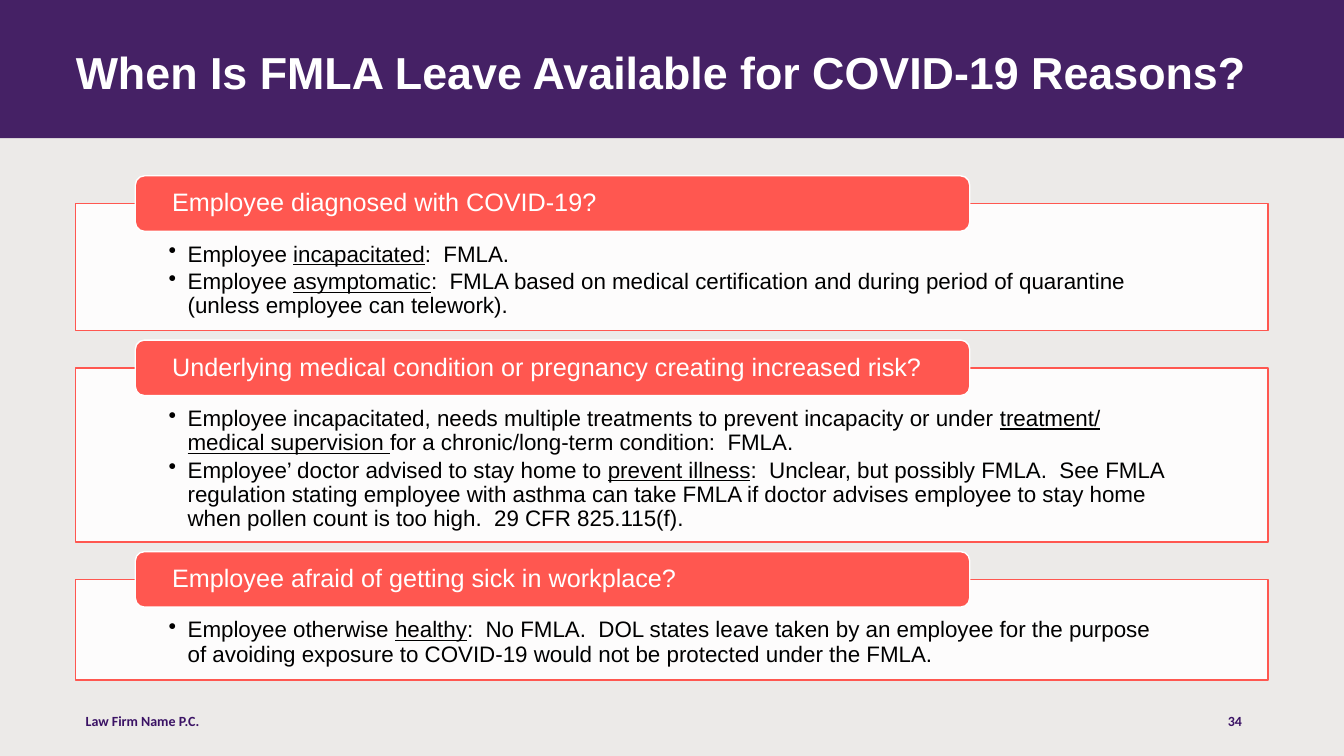
from dataclasses import dataclass

import lxml.etree
import pptx
import pptx.dml.color
import pptx.enum.shapes
import pptx.enum.text
import pptx.oxml.ns
import pptx.util

Cm = pptx.util.Cm
Pt = pptx.util.Pt
Kind = pptx.enum.shapes.MSO_SHAPE
Align = pptx.enum.text.PP_ALIGN
Anchor = pptx.enum.text.MSO_ANCHOR
qn = pptx.oxml.ns.qn


@dataclass(frozen=True)
class Theme:
    purple: str = "3B1365"
    coral: str = "FF5750"
    taupe: str = "82766A"
    white: str = "FFFFFF"
    black: str = "000000"
    font: str = "Arial"
    small: str = "Calibri"
    title: int = 32
    head: int = 18
    body: int = 16
    foot: int = 10


THEME = Theme()
WIDE, HIGH = 33.87, 19.05
LEFT, SPAN = 1.91, 30.05
GAP = 0.94
CARDS = [
    (3.2, "Employee diagnosed with COVID-19?", [
        "Employee _incapacitated_:  FMLA.",
        "Employee _asymptomatic_:  FMLA based on medical certification and "
        "during period of quarantine (unless employee can telework).",
    ]),
    (4.39, "Underlying medical condition or pregnancy creating increased risk?", [
        "Employee incapacitated, needs multiple treatments to prevent incapacity "
        "or under _treatment/ medical supervision _for a chronic/long-term "
        "condition:  FMLA.",
        "Employee’ doctor advised to stay home to _prevent illness_:  Unclear, "
        "but possibly FMLA.  See FMLA regulation stating employee with asthma "
        "can take FMLA if doctor advises employee to stay home when pollen "
        "count is too high.  29 CFR 825.115(f).",
    ]),
    (2.54, "Employee afraid of getting sick in workplace?", [
        "Employee otherwise _healthy_:  No FMLA.  DOL states leave taken by an "
        "employee for the purpose of avoiding exposure to COVID-19 would not be "
        "protected under the FMLA.",
    ]),
]


def tint(code):
    return pptx.dml.color.RGBColor.from_string(code)


def bullet(para):
    props = para._p.get_or_add_pPr()
    props.set("marL", str(Cm(0.48)))
    props.set("indent", str(-Cm(0.48)))
    lxml.etree.SubElement(props, qn("a:buChar")).set("char", "•")


def write(text, *, shape, size, color, font=THEME.font, bold=False,
          align=Align.LEFT, anchor=Anchor.TOP, inset=(0, 0, 0, 0),
          line=0.9, after=0, dots=False):
    frame = shape.text_frame
    frame.word_wrap = True
    frame.vertical_anchor = anchor
    (frame.margin_left, frame.margin_top,
     frame.margin_right, frame.margin_bottom) = map(Cm, inset)
    for num, row in enumerate(text.split("\n")):
        para = frame.add_paragraph() if num else frame.paragraphs[0]
        para.alignment = align
        para.line_spacing = line
        para.space_after = Pt(after)
        if dots:
            bullet(para)
        for part, words in enumerate(row.split("_")):
            run = para.add_run()
            run.text = words
            run.font.name = font
            run.font.size = Pt(size)
            run.font.bold = bold
            run.font.underline = part % 2 == 1
            run.font.color.rgb = tint(color)


def block(slide, kind, area, fill, line=None, alpha=None):
    shape = slide.shapes.add_shape(kind, *map(Cm, area))
    shape.shadow.inherit = False
    shape.fill.solid()
    shape.fill.fore_color.rgb = tint(fill)
    if alpha:
        color = shape.fill._xPr.find(qn("a:solidFill"))[0]
        lxml.etree.SubElement(color, qn("a:alpha")).set("val", str(alpha * 1000))
    if line:
        shape.line.color.rgb = tint(line)
        shape.line.width = Pt(1)
    else:
        shape.line.fill.background()
    return shape


def label(slide, text, area, **form):
    write(text, shape=slide.shapes.add_textbox(*map(Cm, area)), **form)


def card(slide, top, high, head, rows):
    panel = block(slide, Kind.RECTANGLE, (LEFT, top, SPAN, high),
                  THEME.white, line=THEME.coral, alpha=90)
    write("\n".join(rows), shape=panel, size=THEME.body, color=THEME.black,
          inset=(2.34, 0.99, 2.34, 0.3), after=2.5, dots=True)
    tab = block(slide, Kind.ROUNDED_RECTANGLE, (3.41, top - 0.7, 21.03, 1.4),
                THEME.coral, line=THEME.white)
    write(head, shape=tab, size=THEME.head, color=THEME.white,
          anchor=Anchor.MIDDLE, inset=(0.86, 0, 0.86, 0))


def main():
    deck = pptx.Presentation()
    deck.slide_width, deck.slide_height = Cm(WIDE), Cm(HIGH)
    slide = deck.slides.add_slide(deck.slide_layouts[6])

    block(slide, Kind.RECTANGLE, (0, 0, WIDE, 3.48), THEME.purple)
    block(slide, Kind.RECTANGLE, (0, 0, WIDE, HIGH), THEME.taupe, alpha=15)
    label(slide, "When Is FMLA Leave Available for COVID-19 Reasons?",
          (LEFT, 1.27, SPAN, 2.06), size=THEME.title, color=THEME.white, bold=True)

    foot = dict(size=THEME.foot, color=THEME.purple, font=THEME.small, bold=True,
                anchor=Anchor.MIDDLE, inset=(0.25, 0.13, 0.25, 0.13),
                line=1.0, after=6)
    label(slide, "Law Firm Name P.C.", (LEFT, 17.65, 9.53, 1.02), **foot)
    label(slide, "34", (23.93, 17.65, 7.62, 1.02), align=Align.RIGHT, **foot)

    top = 5.13
    for high, head, rows in CARDS:
        card(slide, top, high, head, rows)
        top += high + GAP

    deck.save("out.pptx")


if __name__ == "__main__":
    main()
